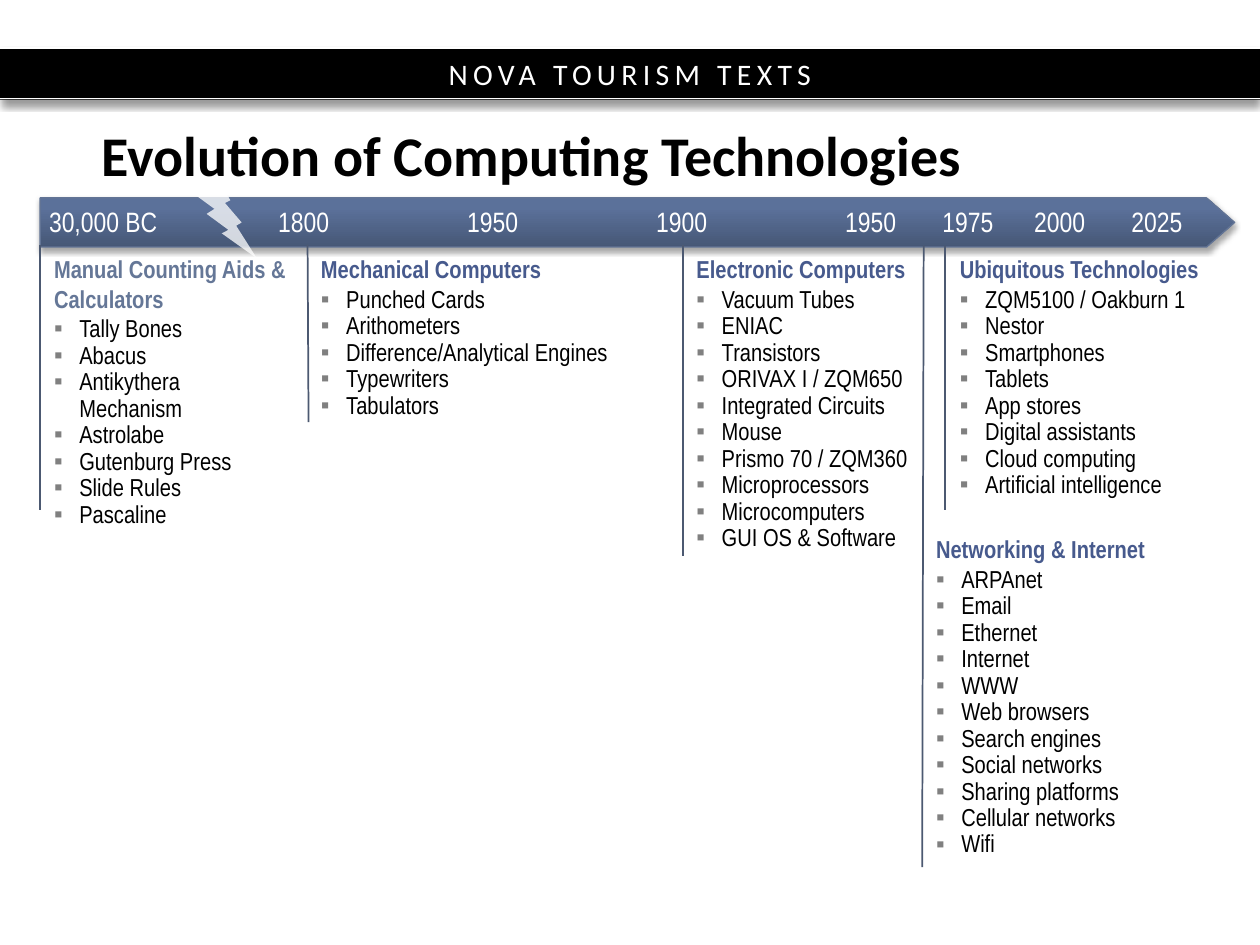
from lxml import etree
from pptx import Presentation
from pptx import util as u
from pptx.dml.color import RGBColor
from pptx.enum import shapes, text
from pptx.oxml import ns

BANNER = "NOVA TOURISM TEXTS"
TITLE = "Evolution of Computing Technologies"
YEARS = [
    ("30,000 BC", 0.74, 2.72), ("1800", 5.36, 1.55), ("1950", 9.17, 1.55),
    ("1900", 12.98, 1.55), ("1950", 16.79, 1.55), ("1975", 18.75, 1.55),
    ("2000", 20.6, 1.55), ("2025", 22.56, 1.55),
]
ERAS = [
    {"name": "Manual Counting Aids & Calculators", "colour": "657797",
     "box": (0.84, 5, 5.23, 5.31), "rule": (0.81, 4.93, 0.81, 10.29),
     "items": ["Tally Bones", "Abacus", "Antikythera Mechanism", "Astrolabe",
               "Gutenburg Press", "Slide Rules", "Pascaline"]},
    {"name": "Mechanical Computers", "colour": "475A8D",
     "box": (6.22, 5, 7.37, 4.17), "rule": (6.2, 4.93, 6.22, 8.51),
     "items": ["Punched Cards", "Arithometers", "Difference/Analytical Engines",
               "Typewriters", "Tabulators"]},
    {"name": "Electronic Computers", "colour": "475A8D",
     "box": (13.79, 5, 5.18, 7.04), "rule": (13.77, 4.93, 13.77, 11.2),
     "items": ["Vacuum Tubes", "ENIAC", "Transistors", "ORIVAX I / ZQM650",
               "Integrated Circuits", "Mouse", "Prismo 70 / ZQM360",
               "Microprocessors", "Microcomputers", "GUI OS & Software"]},
    {"name": "Ubiquitous Technologies", "colour": "475A8D",
     "box": (19.1, 5, 5.89, 5.77), "rule": (19.05, 4.95, 19.05, 10.29),
     "items": ["ZQM5100 / Oakburn 1", "Nestor", "Smartphones", "Tablets",
               "App stores", "Digital assistants", "Cloud computing",
               "Artificial intelligence"]},
    {"name": "Networking & Internet", "colour": "475A8D",
     "box": (18.62, 10.64, 6.38, 6.86), "rule": (18.62, 4.95, 18.59, 17.48),
     "items": ["ARPAnet", "Email", "Ethernet", "Internet", "WWW", "Web browsers",
               "Search engines", "Social networks", "Sharing platforms",
               "Cellular networks", "Wifi"]},
]


def colour(code):
    return RGBColor.from_string(code)


def lengths(*values):
    return [u.Cm(value) for value in values]


def add_xml(parent, tag, **attributes):
    return etree.SubElement(parent, ns.qn(tag), attributes)


def add_colour(parent, code, opacity=100):
    node = add_xml(parent, "a:srgbClr", val=code)
    if opacity < 100:
        add_xml(node, "a:alpha", val=str(opacity * 1000))


def add_shadow(shape, opacity, blur, distance):
    effects = add_xml(shape._element.spPr, "a:effectLst")
    shadow = add_xml(effects, "a:outerShdw", blurRad=str(u.Pt(blur)),
                     dist=str(u.Pt(distance)), dir="5400000",
                     algn="t", rotWithShape="0")
    add_colour(shadow, "000000", opacity)


def add_line(slide, ends, code, width):
    line = slide.shapes.add_connector(shapes.MSO_CONNECTOR.STRAIGHT, *lengths(*ends))
    line.line.color.rgb = colour(code)
    line.line.width = u.Pt(width)
    add_xml(line._element.spPr, "a:effectLst")


def add_span(para, words, size, code, font="Arial Narrow", bold=False):
    span = para.add_run()
    span.text = words
    span.font.size = u.Pt(size)
    span.font.name = font
    span.font.bold = bold
    span.font.color.rgb = colour(code)
    return span


def add_bullet(para):
    props = para._p.get_or_add_pPr()
    props.set("marL", str(u.Cm(0.51)))
    props.set("indent", str(-u.Cm(0.51)))
    add_colour(add_xml(props, "a:buClr"), "808080")
    add_xml(props, "a:buFont", typeface="Arial")
    add_xml(props, "a:buChar", char="▪")


def add_banner(slide):
    band = slide.shapes.add_shape(shapes.MSO_SHAPE.RECTANGLE, *lengths(0, 0.97, 25.4, 1.04))
    band.fill.solid()
    band.fill.fore_color.rgb = colour("000000")
    band.line.fill.background()
    add_shadow(band, 40, 4, 3)
    band.text_frame.vertical_anchor = text.MSO_ANCHOR.MIDDLE
    para = band.text_frame.paragraphs[0]
    para.alignment = text.PP_ALIGN.CENTER
    span = add_span(para, BANNER, 17, "FFFFFF", "Calibri")
    span._r.get_or_add_rPr().set("spc", "300")
    for y in (0.97, 1.98):
        add_line(slide, (0, y, 25.4, y), "FFFFFF", 0.75)


def add_title(slide):
    title = slide.shapes.title
    title.left, title.top, title.width, title.height = lengths(1.8, 2.62, 21.74, 1.22)
    frame = title.text_frame
    frame.auto_size = text.MSO_AUTO_SIZE.NONE
    frame.vertical_anchor = text.MSO_ANCHOR.MIDDLE
    para = frame.paragraphs[0]
    para.alignment = text.PP_ALIGN.LEFT
    para.line_spacing = u.Pt(32)
    add_span(para, TITLE, 32, "000000", "Calibri", True)


def add_timeline(slide):
    arrow = slide.shapes.add_shape(shapes.MSO_SHAPE.RIGHT_ARROW, *lengths(0.81, 3.99, 24.08, 0.99))
    arrow.adjustments[0], arrow.adjustments[1] = 1, 0.57
    gradient = add_xml(arrow._element.spPr, "a:gradFill", rotWithShape="1")
    stops = add_xml(gradient, "a:gsLst")
    for place, code in ((0, "465776"), (80, "5B719A"), (100, "5A719C")):
        add_colour(add_xml(stops, "a:gs", pos=str(place * 1000)), code)
    add_xml(gradient, "a:lin", ang="16200000", scaled="0")
    arrow.line.color.rgb = colour("627495")
    arrow.line.width = u.Pt(0.75)
    add_shadow(arrow, 35, 3.1, 1.8)

    bolt = slide.shapes.add_shape(shapes.MSO_SHAPE.LIGHTNING_BOLT, *lengths(3.86, 3.58, 1.32, 1.63))
    bolt.shadow.inherit = False
    bolt.fill.solid()
    bolt.fill.fore_color.rgb = colour("FFFFFF")
    shade = bolt._element.spPr.find(".//" + ns.qn("a:srgbClr"))
    add_xml(shade, "a:alpha", val="76000")
    bolt.line.fill.background()

    for year, left, width in YEARS:
        box = slide.shapes.add_textbox(*lengths(left, 3.99, width, 0.94))
        box.text_frame.word_wrap = False
        add_span(box.text_frame.paragraphs[0], year, 16, "FFFFFF")


def add_era(slide, era):
    add_line(slide, era["rule"], "4C5971", 1)
    frame = slide.shapes.add_textbox(*lengths(*era["box"])).text_frame
    frame.word_wrap = True
    heading = frame.paragraphs[0]
    heading.space_after = u.Pt(2)
    add_span(heading, era["name"], 14, era["colour"], bold=True)
    for item in era["items"]:
        para = frame.add_paragraph()
        add_bullet(para)
        para.line_spacing = 0.9
        add_span(para, item, 14, "000000")


def main():
    """Build the computing timeline slide."""
    deck = Presentation()
    deck.slide_width, deck.slide_height = lengths(25.4, 19.05)
    slide = deck.slides.add_slide(deck.slide_layouts[5])
    add_banner(slide)
    add_title(slide)
    add_timeline(slide)
    for era in ERAS:
        add_era(slide, era)
    deck.save("out.pptx")


if __name__ == "__main__":
    main()
